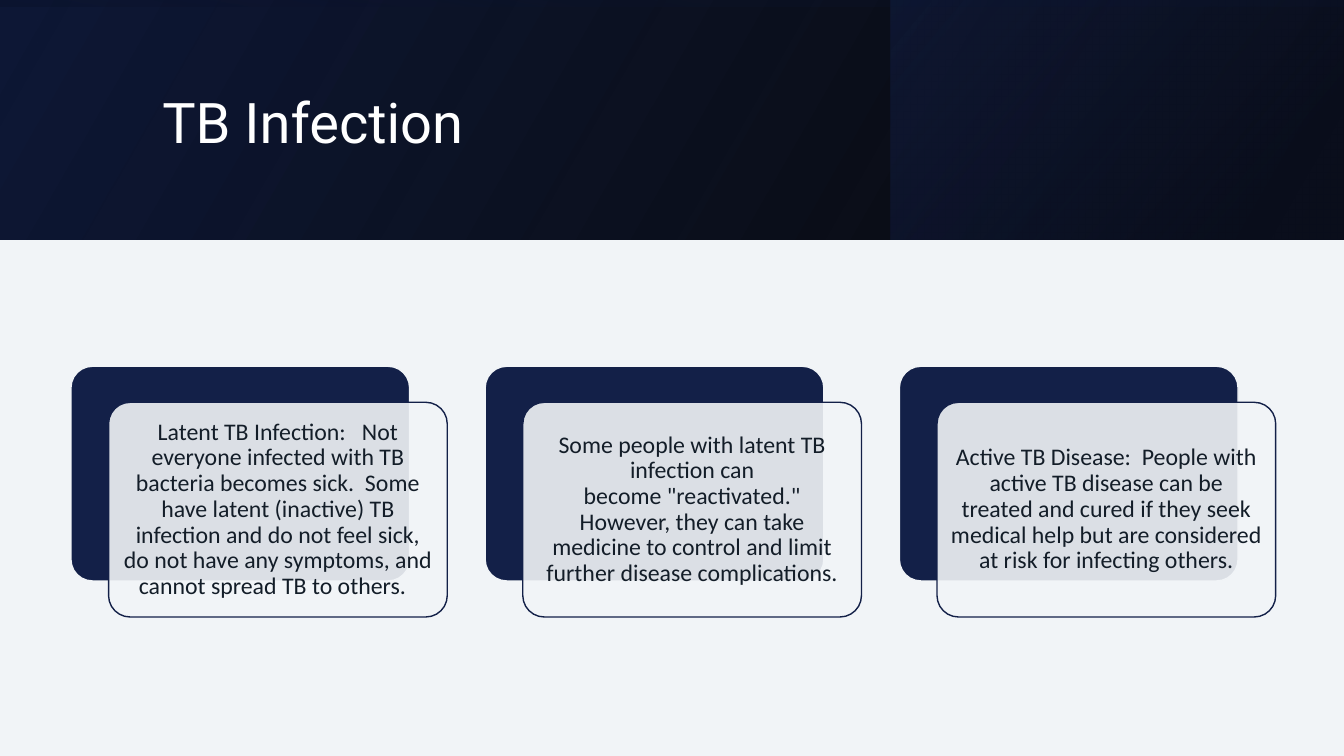
from dataclasses import dataclass

from lxml import etree
from pptx import Presentation
from pptx.dml.color import RGBColor
from pptx.enum.shapes import MSO_SHAPE
from pptx.enum.text import MSO_ANCHOR, MSO_AUTO_SIZE, PP_ALIGN
from pptx.oxml.ns import qn
from pptx.util import Inches, Pt

RECTANGLE = MSO_SHAPE.RECTANGLE
ROUNDED = MSO_SHAPE.ROUNDED_RECTANGLE
MIDDLE = MSO_ANCHOR.MIDDLE
FIXED_SIZE = MSO_AUTO_SIZE.NONE
LEFT = PP_ALIGN.LEFT
CENTER = PP_ALIGN.CENTER

PAGE_WIDTH = Inches(13.33)
PAGE_HEIGHT = Inches(7.5)
COLORS = {
    "paper": "F1F4F7",
    "navy": "132048",
    "deep": "0E1836",
    "night": "0A1024",
    "black": "000000",
    "white": "FFFFFF",
    "ink": "131D28",
}
LINE_SPACING = 0.9
HARD_SPACE = chr(160)
HARD_SPACE_MARK = "~"


@dataclass(frozen=True)
class Frame:
    """Percentages of the slide's width and height."""
    left: float
    top: float
    width: float
    height: float

    def shifted(self, right: float, down: float = 0) -> "Frame":
        return Frame(self.left + right, self.top + down, self.width, self.height)

    def lengths(self) -> tuple[int, int, int, int]:
        return (
            int(PAGE_WIDTH * self.left / 100),
            int(PAGE_HEIGHT * self.top / 100),
            int(PAGE_WIDTH * self.width / 100),
            int(PAGE_HEIGHT * self.height / 100),
        )


@dataclass(frozen=True)
class Stop:
    position: int
    color: str
    opacity: int


@dataclass(frozen=True)
class Wash:
    frame: Frame
    angle: int
    stops: tuple[Stop, Stop]
    rotation: int = 0


BACKDROP = Frame(0, 0, 100, 100)
BAND = Frame(0, 0, 100, 31.67)
WASHES = (
    Wash(BAND, 330, (Stop(0, "black", 96), Stop(100, "deep", 100))),
    Wash(Frame(66.3, 0, 33.7, 31.67), 320,
         (Stop(19, "night", 68), Stop(100, "navy", 48))),
    Wash(BAND, 350, (Stop(23, "deep", 16), Stop(99, "black", 45)), 270),
)
TITLE = Frame(11.33, 5.07, 79.74, 22.93)
FIRST_CARD = Frame(5.28, 48.45, 25.2, 28.4)
CARD_PITCH = 30.82
CARD_OFFSET = (2.8, 4.77)
CARD_TEXTS = (
    "Latent TB Infection:~~ Not everyone infected with TB bacteria~becomes sick.~ "
    "Some have latent (inactive) TB infection and do not~feel sick, "
    "do not have any symptoms, and cannot spread TB to~others.~~",
    "Some people with latent TB infection can become~\"reactivated.\" "
    "However, they can take medicine to control and~limit "
    "further disease complications.",
    "Active TB Disease:~ People with active TB disease can be treated~and cured "
    "if they seek medical help but are considered at risk for~infecting others.",
)


def color(name: str) -> RGBColor:
    return RGBColor.from_string(COLORS[name])


def set_opacity(color_element, percent: int) -> None:
    etree.SubElement(color_element, qn("a:alpha")).set("val", str(percent * 1000))


def add_backdrop(page) -> None:
    box = page.shapes.add_shape(RECTANGLE, *BACKDROP.lengths())
    box.shadow.inherit = False
    box.fill.solid()
    box.fill.fore_color.rgb = color("paper")
    box.line.fill.background()


def add_wash(page, wash: Wash) -> None:
    left, top, width, height = wash.frame.lengths()
    if wash.rotation:
        left, top = left + (width - height) // 2, top + (height - width) // 2
        width, height = height, width
    box = page.shapes.add_shape(RECTANGLE, left, top, width, height)
    box.shadow.inherit = False
    box.rotation = wash.rotation
    box.line.fill.background()
    box.fill.gradient()
    properties = box._element.spPr
    properties.find(qn("a:xfrm")).set("flipH", "1")
    gradient = properties.find(qn("a:gradFill"))
    gradient.find(qn("a:lin")).set("ang", str(wash.angle * 60000))
    stop_list = gradient.find(qn("a:gsLst"))
    for old_stop in list(stop_list):
        stop_list.remove(old_stop)
    for stop in wash.stops:
        entry = etree.SubElement(stop_list, qn("a:gs"))
        entry.set("pos", str(stop.position * 1000))
        shade = etree.SubElement(entry, qn("a:srgbClr"))
        shade.set("val", COLORS[stop.color])
        set_opacity(shade, stop.opacity)


def add_panel(page, frame: Frame, fill: str, line: str):
    box = page.shapes.add_shape(ROUNDED, *frame.lengths())
    box.shadow.inherit = False
    box.adjustments[0] = 0.1
    box.fill.solid()
    box.fill.fore_color.rgb = color(fill)
    box.line.color.rgb = color(line)
    box.line.width = Pt(1)
    return box


def write(box, text: str, font: str, size: int, ink: str, alignment) -> None:
    frame = box.text_frame
    frame.word_wrap = True
    frame.auto_size = FIXED_SIZE
    frame.vertical_anchor = MIDDLE
    frame.text = text.replace(HARD_SPACE_MARK, HARD_SPACE)
    para = frame.paragraphs[0]
    para.alignment = alignment
    para.line_spacing = LINE_SPACING
    para.font.name = font
    para.font.size = Pt(size)
    para.font.color.rgb = color(ink)


def add_card(page, frame: Frame, text: str) -> None:
    add_panel(page, frame, "navy", "paper")
    front = add_panel(page, frame.shifted(*CARD_OFFSET), "paper", "navy")
    set_opacity(front._element.spPr.find(qn("a:solidFill"))[0], 90)
    inset = Inches(0.07)
    text_frame = front.text_frame
    text_frame.margin_left = text_frame.margin_right = inset
    text_frame.margin_top = text_frame.margin_bottom = inset
    write(front, text, "Calibri", 17, "ink", CENTER)


def add_title(page, text: str) -> None:
    title = page.shapes.title
    title.left, title.top, title.width, title.height = TITLE.lengths()
    write(title, text, "Roboto", 40, "white", LEFT)
    page.shapes._spTree.append(title._element)


def main() -> None:
    deck = Presentation()
    deck.slide_width = PAGE_WIDTH
    deck.slide_height = PAGE_HEIGHT
    page = deck.slides.add_slide(deck.slide_layouts[5])
    page.background.fill.solid()
    page.background.fill.fore_color.rgb = color("paper")
    add_backdrop(page)
    for wash in WASHES:
        add_wash(page, wash)
    add_title(page, "TB Infection")
    for column, text in enumerate(CARD_TEXTS):
        add_card(page, FIRST_CARD.shifted(column * CARD_PITCH), text)
    deck.save("out.pptx")


if __name__ == "__main__":
    main()
